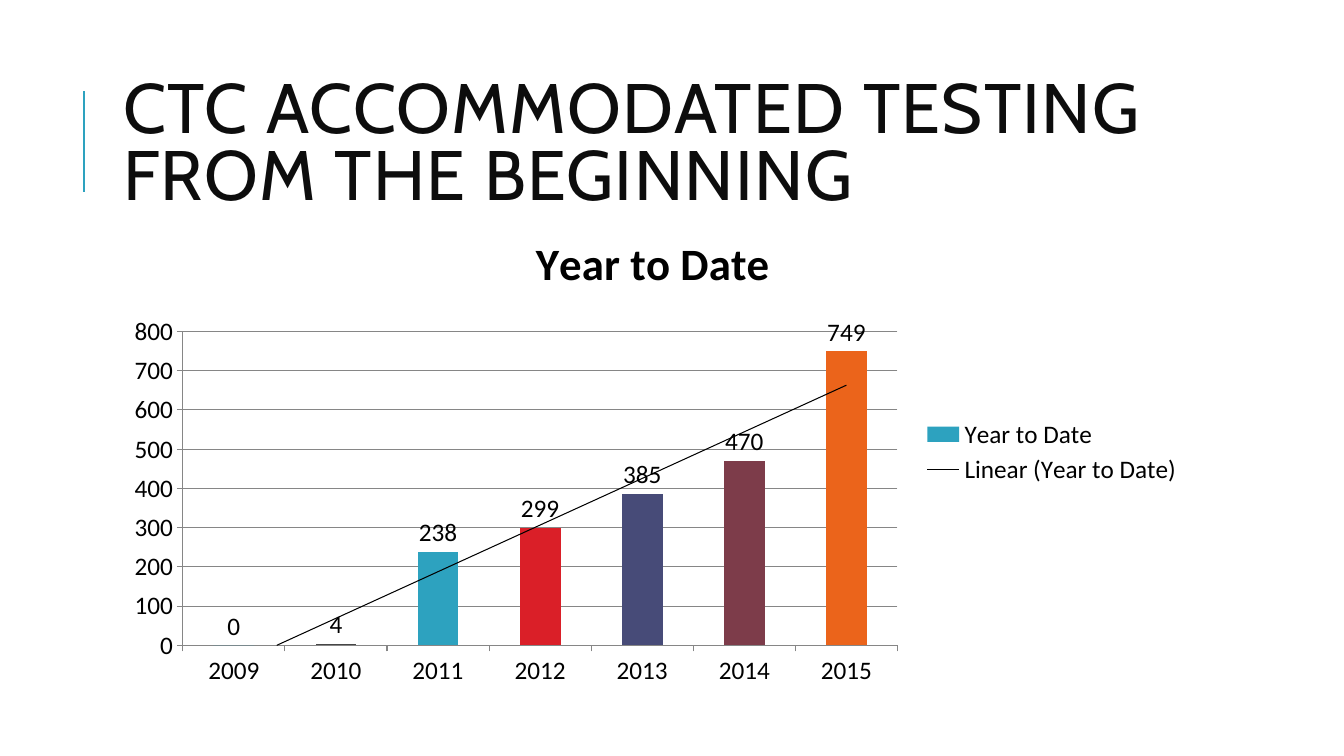
"""Build the slide on accommodated testing by year."""
import pptx
import pptx.chart.data
import pptx.dml.color
import pptx.enum.chart
import pptx.enum.shapes
import pptx.enum.text
import pptx.oxml
import pptx.oxml.ns
import pptx.util
from pptx.util import Inches, Pt

RGBColor = pptx.dml.color.RGBColor
BLACK = RGBColor(0x00, 0x00, 0x00)
INK = RGBColor(0x0D, 0x0D, 0x0D)
GRID = RGBColor(0x86, 0x86, 0x86)
TEAL = RGBColor(0x2D, 0xA2, 0xBF)
GRAY = RGBColor(0x46, 0x46, 0x46)
RED = RGBColor(0xDA, 0x1F, 0x28)
NAVY = RGBColor(0x47, 0x4B, 0x78)
PLUM = RGBColor(0x7D, 0x3C, 0x4A)
ORANGE = RGBColor(0xEB, 0x64, 0x1B)

deck = pptx.Presentation()
deck.slide_width = Inches(13.33)
deck.slide_height = Inches(7.5)
slide = deck.slides.add_slide(deck.slide_layouts[5])

rule = slide.shapes.add_connector(
    pptx.enum.shapes.MSO_CONNECTOR.STRAIGHT,
    Inches(0.83), Inches(1.9), Inches(0.83), Inches(0.9))
rule.line.color.rgb = TEAL
rule.line.width = Pt(1.5)
rule._element.spPr.append(pptx.oxml.parse_xml(
    f"<a:effectLst {pptx.oxml.ns.nsdecls('a')}/>"))

title = slide.shapes.title
title.left, title.top = Inches(1.12), Inches(0.64)
title.width, title.height = Inches(10.63), Inches(1.64)
frame = title.text_frame
frame.text = "CTC ACCOMMODATED TESTING FROM THE BEGINNING"
frame.word_wrap = True
frame.auto_size = pptx.enum.text.MSO_AUTO_SIZE.NONE
frame.vertical_anchor = pptx.enum.text.MSO_ANCHOR.MIDDLE
head = frame.paragraphs[0]
head.alignment = pptx.enum.text.PP_ALIGN.LEFT
head.line_spacing = 0.8
head.font.name = "Cabin"
head.font.size = Pt(50)
head.font.color.rgb = INK
head.runs[0]._r.get_or_add_rPr().set("spc", "100")

data = pptx.chart.data.CategoryChartData()
data.categories = [str(year) for year in range(2009, 2016)]
data.add_series("Year to Date", (0, 4, 238, 299, 385, 470, 749))
chart = slide.shapes.add_chart(
    pptx.enum.chart.XL_CHART_TYPE.COLUMN_CLUSTERED,
    Inches(1.12), Inches(2.07), Inches(10.71), Inches(4.83), data).chart
chart.font.name = "Calibri"
chart.font.size = Pt(18)
chart.font.color.rgb = BLACK

chart.has_title = True
chart.chart_title.include_in_layout = False
chart.chart_title.text_frame.text = "Year to Date"
font = chart.chart_title.text_frame.paragraphs[0].font
font.name = "Calibri"
font.size = Pt(32)
font.bold = True
font.color.rgb = BLACK

chart.has_legend = True
chart.legend.position = pptx.enum.chart.XL_LEGEND_POSITION.RIGHT
chart.legend.include_in_layout = False

for axis in (chart.category_axis, chart.value_axis):
    axis.major_tick_mark = pptx.enum.chart.XL_TICK_MARK.OUTSIDE
    axis.format.line.color.rgb = GRID
scale = chart.value_axis
scale.minimum_scale, scale.maximum_scale, scale.major_unit = 0, 800, 100
scale.major_gridlines.format.line.color.rgb = GRID

plot = chart.plots[0]
plot.gap_width = 150
plot.vary_by_categories = False
bars = plot.series[0]
bars.format.fill.solid()
bars.format.fill.fore_color.rgb = TEAL
for spot, color in {1: GRAY, 3: RED, 4: NAVY, 5: PLUM, 6: ORANGE}.items():
    fill = bars.points[spot].format.fill
    fill.solid()
    fill.fore_color.rgb = color
bars.data_labels.show_value = True
bars.data_labels.position = pptx.enum.chart.XL_LABEL_POSITION.OUTSIDE_END

trend = pptx.oxml.parse_xml(
    f"<c:trendline {pptx.oxml.ns.nsdecls('c', 'a')}>"
    f'<c:spPr><a:ln w="9525"><a:solidFill><a:srgbClr val="{BLACK}"/>'
    '</a:solidFill></a:ln></c:spPr><c:trendlineType val="linear"/>'
    '<c:dispRSqr val="0"/><c:dispEq val="0"/></c:trendline>')
bars._element.find(pptx.oxml.ns.qn("c:cat")).addprevious(trend)

deck.save("out.pptx")
